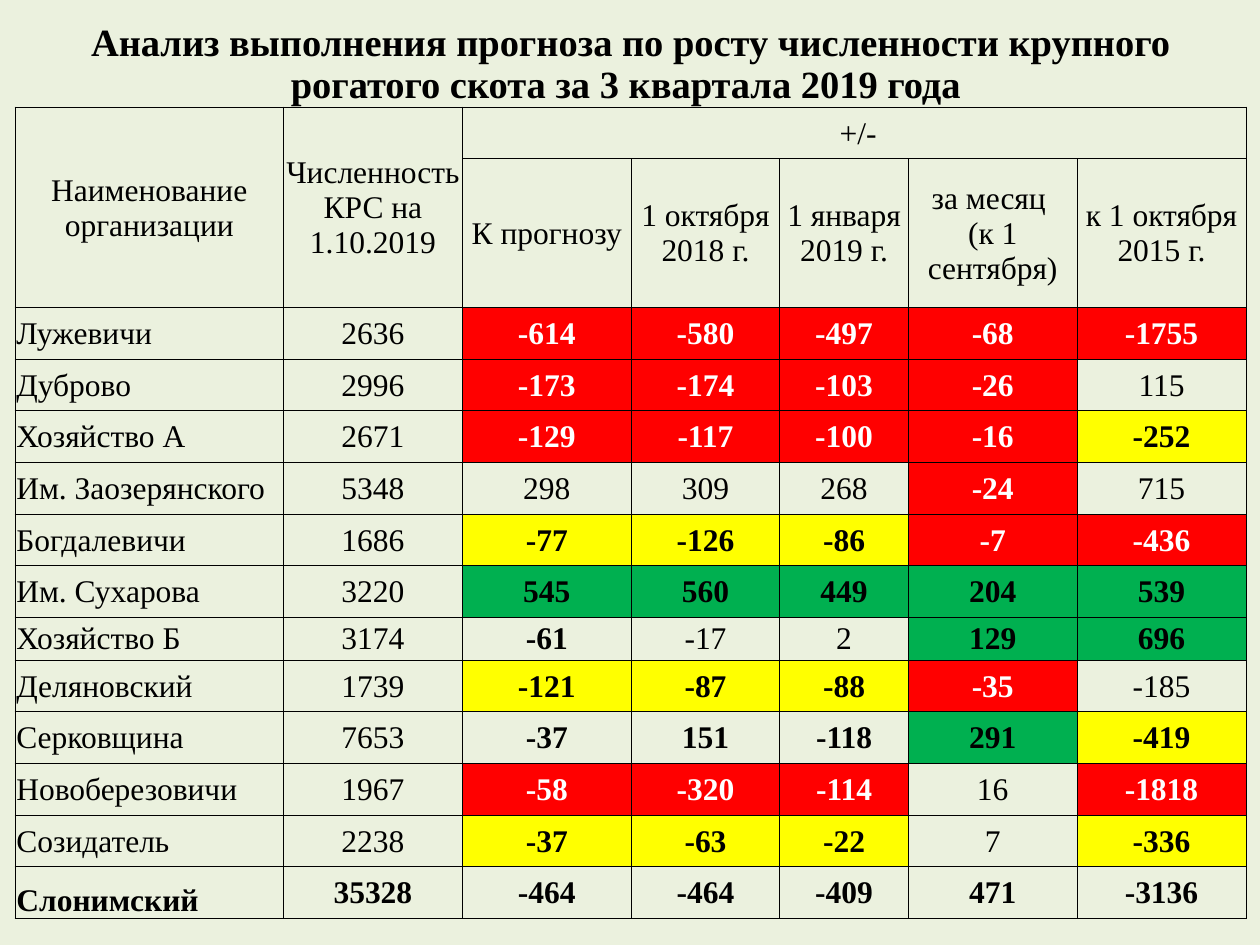
from dataclasses import dataclass
from typing import NamedTuple, Optional

from lxml import etree
from pptx import Presentation
from pptx import util as u
from pptx.dml.color import RGBColor
from pptx.enum import text
from pptx.oxml import ns

PX = u.Inches(1) // 100
FACE = "Times New Roman"
BLACK = RGBColor(0x00, 0x00, 0x00)
WHITE = RGBColor(0xFF, 0xFF, 0xFF)
CREAM = RGBColor(0xEB, 0xF1, 0xDE)
RED = RGBColor(0xFF, 0x00, 0x00)
YELLOW = RGBColor(0xFF, 0xFF, 0x00)
GREEN = RGBColor(0x00, 0xB0, 0x50)

MID = text.MSO_ANCHOR.MIDDLE
LOW = text.MSO_ANCHOR.BOTTOM
LEFT = text.PP_ALIGN.LEFT
CENTER = text.PP_ALIGN.CENTER

COLS = [213, 142, 134, 118, 102, 134, 134]
ROWS = [80, 41, 118] + [41] * 6 + [34] + [41] * 5


@dataclass(frozen=True)
class Style:
    fill: Optional[RGBColor] = None
    color: RGBColor = BLACK
    bold: bool = False
    size: int = 18
    align: text.PP_ALIGN = CENTER
    anchor: text.MSO_ANCHOR = MID


class Head(NamedTuple):
    row: int
    col: int
    words: str
    rows: int = 1
    cols: int = 1
    style: Style = Style()


class Farm(NamedTuple):
    name: str
    herd: int
    gaps: list[int]
    tones: str


TONES = {
    "R": Style(RED, WHITE, True),
    "Y": Style(YELLOW, bold=True),
    "G": Style(GREEN, bold=True),
    "B": Style(CREAM, bold=True),
    "P": Style(CREAM),
}
LABEL = Style(align=LEFT)
TOTAL = Style(bold=True, align=LEFT, anchor=LOW)
TITLE = Style(bold=True, size=22, anchor=LOW)

HEADS = [
    Head(0, 0, "Анализ выполнения прогноза по росту численности крупного "
         "рогатого скота за 3 квартала 2019 года ", 1, 7, TITLE),
    Head(1, 0, "Наименование организации", 2),
    Head(1, 1, "Численность КРС на 1.10.2019", 2),
    Head(1, 2, " +/-", 1, 5),
    Head(2, 2, "К прогнозу"),
    Head(2, 3, "1 октября 2018 г."),
    Head(2, 4, "1 января 2019 г."),
    Head(2, 5, "за месяц \n(к 1 сентября)"),
    Head(2, 6, "к 1 октября 2015 г."),
]
FARMS = [
    Farm("Лужевичи", 2636, [-614, -580, -497, -68, -1755], "RRRRR"),
    Farm("Дуброво", 2996, [-173, -174, -103, -26, 115], "RRRRP"),
    Farm("Хозяйство А", 2671, [-129, -117, -100, -16, -252], "RRRRY"),
    Farm("Им. Заозерянского", 5348, [298, 309, 268, -24, 715], "PPPRP"),
    Farm("Богдалевичи", 1686, [-77, -126, -86, -7, -436], "YYYRR"),
    Farm("Им. Сухарова", 3220, [545, 560, 449, 204, 539], "GGGGG"),
    Farm("Хозяйство Б", 3174, [-61, -17, 2, 129, 696], "BPPGG"),
    Farm("Деляновский", 1739, [-121, -87, -88, -35, -185], "YYYRP"),
    Farm("Серковщина", 7653, [-37, 151, -118, 291, -419], "BBBGY"),
    Farm("Новоберезовичи", 1967, [-58, -320, -114, 16, -1818], "RRRPR"),
    Farm("Созидатель", 2238, [-37, -63, -22, 7, -336], "YYYPY"),
    Farm("Слонимский", 35328, [-464, -464, -409, 471, -3136], "BBBBB"),
]


def edge(cell, sides: str) -> None:
    props = cell._tc.get_or_add_tcPr()
    for spot, side in enumerate("LRTB"):
        line = etree.Element(ns.qn(f"a:ln{side}"), w=str(u.Pt(0.5)))
        if side in sides:
            fill = etree.SubElement(line, ns.qn("a:solidFill"))
            etree.SubElement(fill, ns.qn("a:srgbClr"), val=str(BLACK))
        else:
            etree.SubElement(line, ns.qn("a:noFill"))
        props.insert(spot, line)


def write(cell, words: str, style: Style) -> None:
    frame = {"margin_left": PX, "margin_right": PX, "margin_top": PX,
             "margin_bottom": 0, "vertical_anchor": style.anchor}
    for key, val in frame.items():
        setattr(cell, key, val)
    if style.fill is not None:
        cell.fill.solid()
        cell.fill.fore_color.rgb = style.fill
    cell.text = words
    face = {"name": FACE, "size": u.Pt(style.size), "bold": style.bold}
    for para in cell.text_frame.paragraphs:
        para.alignment = style.align
        for run in para.runs:
            for key, val in face.items():
                setattr(run.font, key, val)
            run.font.color.rgb = style.color


def grid(slide):
    table = slide.shapes.add_table(
        len(ROWS), len(COLS), 12 * PX, 5 * PX,
        sum(COLS) * PX, sum(ROWS) * PX).table
    table.first_row = table.horz_banding = False
    for col, width in zip(table.columns, COLS):
        col.width = width * PX
    for row, height in zip(table.rows, ROWS):
        row.height = height * PX
    for spot, row in enumerate(table.rows):
        for cell in row.cells:
            cell.fill.background()
            edge(cell, "LRTB" if spot else "B")
    return table


def main() -> None:
    deck = Presentation()
    deck.slide_width, deck.slide_height = 1000 * PX, 750 * PX
    slide = deck.slides.add_slide(deck.slide_layouts[6])
    slide.background.fill.solid()
    slide.background.fill.fore_color.rgb = CREAM
    table = grid(slide)
    for head in HEADS:
        cell = table.cell(head.row, head.col)
        if head.rows * head.cols > 1:
            cell.merge(table.cell(head.row + head.rows - 1,
                                  head.col + head.cols - 1))
        write(cell, head.words, head.style)
    for row, farm in enumerate(FARMS, 3):
        last = farm is FARMS[-1]
        write(table.cell(row, 0), farm.name, TOTAL if last else LABEL)
        write(table.cell(row, 1), str(farm.herd), Style(bold=last))
        for col, (gap, tone) in enumerate(zip(farm.gaps, farm.tones), 2):
            write(table.cell(row, col), str(gap), TONES[tone])
    deck.save("out.pptx")


if __name__ == "__main__":
    main()
